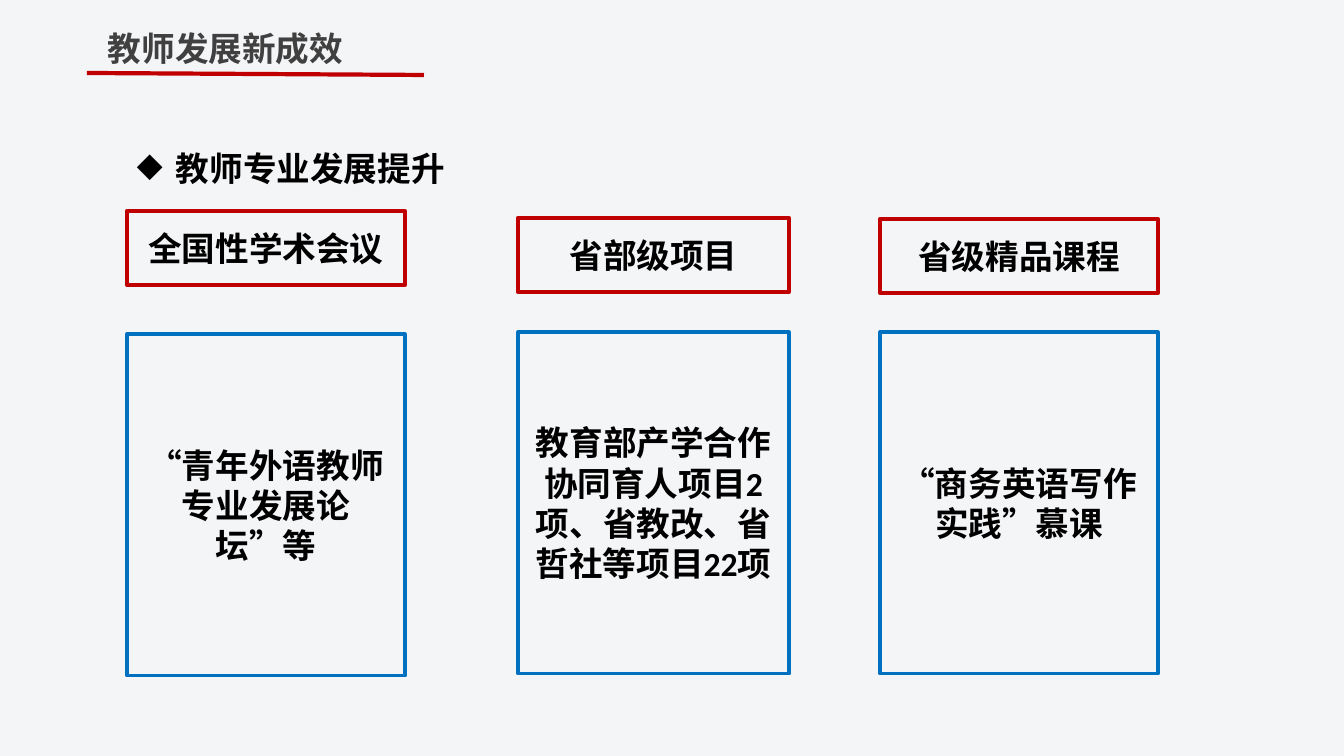
from pptx import Presentation
from pptx import util as u
from pptx.dml.color import RGBColor
from pptx.enum import shapes, text
from lxml import etree

PX = 914400 / 100.8
FONT, CJK = "Calibri", "Noto Sans CJK SC"
BG, BLACK, GREY, RED, BLUE = "F4F5F7", "000000", "404040", "C00000", "0070C0"
A = "{http://schemas.openxmlformats.org/drawingml/2006/main}"

TITLE = "教师发展新成效"
HEADING = "教师专业发展提升"
HEAD_H, BODY_H = 74, 342
COLUMNS = [
    (127, 278, 211, 334, "全国性学术会议", ["“青年外语教师专业发展论坛”等"]),
    (518, 271, 218, 332, "省部级项目",
     ["教育部产学合作协同育人项目2项、省教改、省哲社等项目22项"]),
    (880, 278, 219, 332, "省级精品课程", ["“商务英语写作", "实践”慕课"]),
]


def px(n):
    return u.Emu(round(n * PX))


def rgb(c):
    return RGBColor.from_string(c)


def add_run(p, words, font, color=BLACK):
    r = p.add_run()
    r.text = words
    r.font.size = u.Pt(24)
    r.font.bold = True
    r.font.name = font
    r.font.color.rgb = rgb(color)
    etree.SubElement(r.font._element, A + "ea", typeface=CJK)


def add_text(s, x, y, w, h, words, color):
    tf = s.shapes.add_textbox(px(x), px(y), px(w), px(h)).text_frame
    tf.word_wrap = True
    p = tf.paragraphs[0]
    add_run(p, words, CJK, color)
    return p


def add_box(group, x, y, w, h, color, weight, lines):
    sp = group.shapes.add_shape(shapes.MSO_SHAPE.RECTANGLE, px(x), px(y), px(w), px(h))
    sp.shadow.inherit = False
    sp.fill.background()
    sp.line.color.rgb = rgb(color)
    sp.line.width = u.Pt(weight)
    tf = sp.text_frame
    tf.word_wrap = True
    tf.vertical_anchor = text.MSO_ANCHOR.MIDDLE
    for i, line in enumerate(lines):
        p = tf.add_paragraph() if i else tf.paragraphs[0]
        p.alignment = text.PP_ALIGN.CENTER
        add_run(p, line, FONT)


def main():
    prs = Presentation()
    prs.slide_width, prs.slide_height = px(1344), px(756)
    s = prs.slides.add_slide(prs.slide_layouts[6])
    s.background.fill.solid()
    s.background.fill.fore_color.rgb = rgb(BG)

    add_text(s, 98, 23, 316, 50, TITLE, GREY)
    p = add_text(s, 127, 143, 605, 50, HEADING, BLACK)
    pPr = p._p.get_or_add_pPr()
    pPr.set("marL", str(px(39)))
    pPr.set("indent", str(-px(39)))
    etree.SubElement(pPr, A + "buChar", char="◆")

    for x, w, head_y, body_y, head, body in COLUMNS:
        group = s.shapes.add_group_shape()
        add_box(group, x, head_y, w, HEAD_H, RED, 3, [head])
        add_box(group, x, body_y, w, BODY_H, BLUE, 2.25, body)

    rule = s.shapes.add_connector(shapes.MSO_CONNECTOR.STRAIGHT,
                                  px(87), px(73), px(424), px(75))
    rule.line.color.rgb = rgb(RED)
    rule.line.width = u.Pt(3)
    etree.SubElement(rule._element.spPr, A + "effectLst")

    prs.save("out.pptx")


if __name__ == "__main__":
    main()
